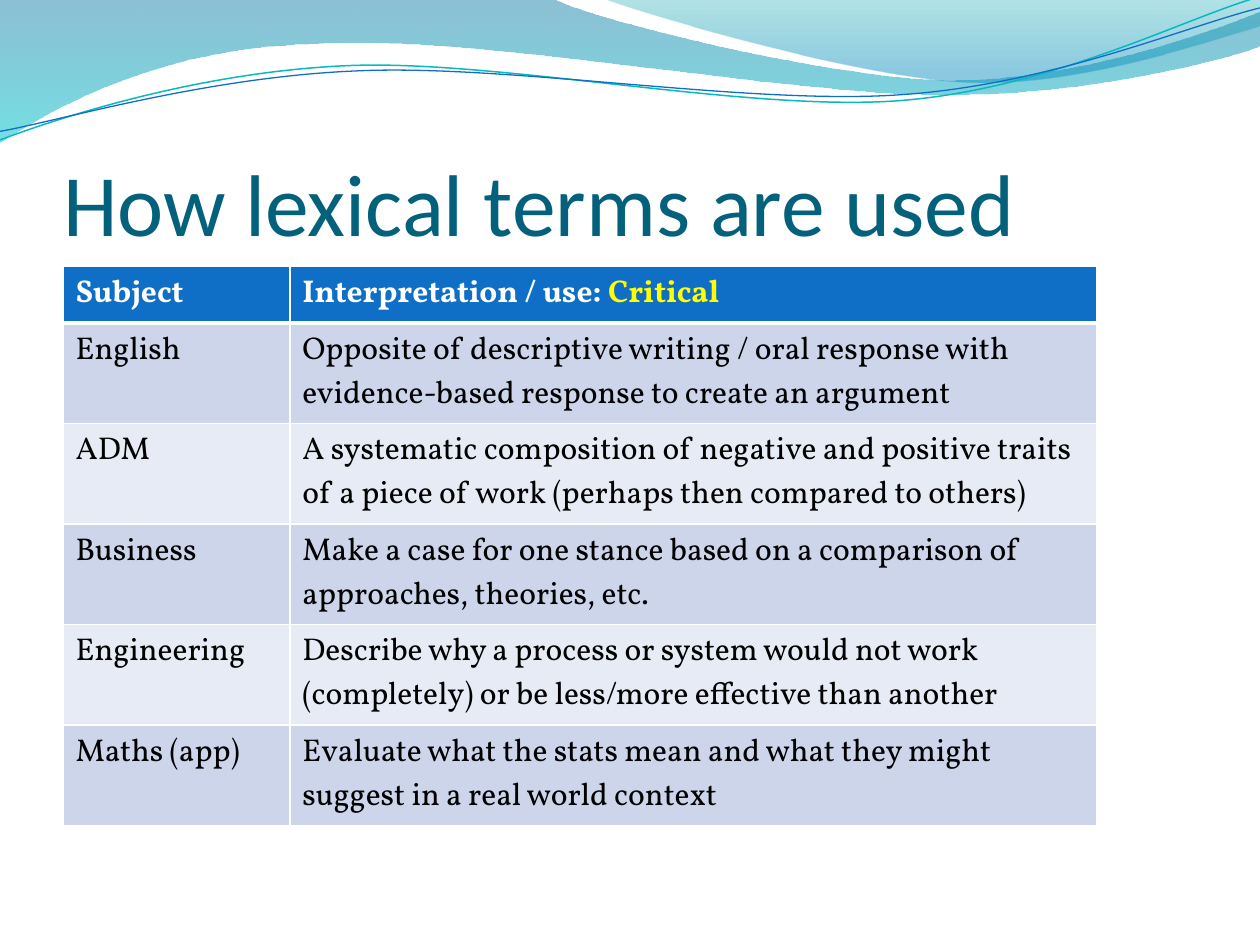
from lxml import etree
from pptx import Presentation
from pptx.dml.color import RGBColor
from pptx.enum.text import MSO_ANCHOR, MSO_AUTO_SIZE, PP_ALIGN
from pptx.oxml.ns import qn
from pptx.util import Pt

COLORS = {
    "title": "04617B", "header": "0F6FC6", "critical": "FFFF00",
    "white": "FFFFFF", "black": "000000", "odd": "CCD5EA", "even": "E7EBF5",
    "teal_line": "0AB8BF", "blue_line": "0F6FC6",
    "deep": "0074A1", "aqua": "00C6CF", "sea": "00A1A9", "sky": "008BBF",
}
TITLE = "How lexical terms are used"
HEADER = ("Subject", "Interpretation / use: ")
TERM = "Critical"
USES = [
    ("English", "Opposite of descriptive writing / oral response with "
                "evidence-based response to create an argument"),
    ("ADM", "A systematic composition of negative and positive traits of a "
            "piece of work (perhaps then compared to others)"),
    ("Business", "Make a case for one stance based on a comparison of "
                 "approaches, theories, etc."),
    ("Engineering", "Describe why a process or system would not work "
                    "(completely) or be less/more effective than another"),
    ("Maths (app)", "Evaluate what the stats mean and what they might "
                    "suggest in a real world context"),
]

# Outlines in points: a pair is a straight step, six numbers are a cubic curve.
BAND = [(0, 0), (317, -0.5), (343, 12, 478, 45.5, 546, 45.5),
        (614, 45.5, 690, 18.5, 720, 6.5), (720.5, 26),
        (708, 31.5, 626.5, 54.5, 537, 54), (447.5, 54, 275, 20, 185, 24.5),
        (93, 26, 33, 60, -0.5, 81.5)]
CREST = [(345, -0.5), (366.5, 8, 491, 44.5, 553.5, 47),
         (616.5, 49.5, 692, 23, 720, 15), (720, 0)]
# The two curves are drawn level and then turned by CURVE_TILT degrees.
CURVE_TILT = 357.3
TEAL_CURVE = [(-1.4, 63), (33.7, 51.7, 114.3, 29.4, 199.9, 30),
              (284.9, 30.5, 425.8, 67.2, 512.5, 64.8),
              (599.2, 62.3, 676.6, 25.9, 720.1, 15.5)]
BLUE_CURVE = [(-1.1, 58.1), (33.2, 53.7, 118.2, 32.6, 204.3, 33.2),
              (290.4, 33.2, 429.1, 63.8, 515.3, 61.4),
              (601.4, 59.4, 678.5, 30, 721.4, 21.5)]
# Gradient stops: position, colour, opacity in percent.
BAND_STOPS = [(0, "deep", 45), (1, "aqua", 55)]
CREST_STOPS = [(0, "sea", 30), (0.8, "sky", 45)]


def rgb(name):
    return RGBColor.from_string(COLORS[name])


def add_outline(shapes, x, y, outline, close):
    """Build a freeform, then join the points of each curve into a Bézier."""
    start, *rest = [(Pt(x + step[i]), Pt(y + step[i + 1]))
                    for step in outline for i in range(0, len(step), 2)]
    builder = shapes.build_freeform(*start)
    builder.add_line_segments(rest, close=close)
    sp = builder.convert_to_shape()
    sp.shadow.inherit = False
    lines = iter(list(sp.element.iter(qn("a:lnTo"))))
    for step in outline[1:]:
        first = next(lines)
        if len(step) == 6:
            first.tag = qn("a:cubicBezTo")
            for line in (next(lines), next(lines)):
                first.append(line[0])
                line.getparent().remove(line)
    return sp


def add_wave(s, x, y, outline, stops):
    sp = add_outline(s.shapes, x, y, outline, close=True)
    sp.line.fill.background()
    sp.fill.gradient()
    sp.fill.gradient_angle = 270
    for stop, (position, color, _) in zip(sp.fill.gradient_stops, stops):
        stop.position = position
        stop.color.rgb = rgb(color)
    for clr, (_, _, opacity) in zip(sp.element.spPr.iter(qn("a:srgbClr")), stops):
        etree.SubElement(clr, qn("a:alpha"), val=str(opacity * 1000))
    return sp


def add_curves(s, x, y):
    group = s.shapes.add_group_shape()
    for outline, color, width in ((TEAL_CURVE, "teal_line", 0.85),
                                  (BLUE_CURVE, "blue_line", 0.75)):
        sp = add_outline(group.shapes, x, y, outline, close=False)
        sp.rotation = CURVE_TILT
        sp.fill.background()
        sp.line.color.rgb = rgb(color)
        sp.line.width = Pt(width)
    return group


def add_waves(s, x, y):
    """Draw the header waves behind the title."""
    waves = [
        add_wave(s, x, y, BAND, BAND_STOPS),
        add_wave(s, x, y, CREST, CREST_STOPS),
        add_curves(s, x, y),
    ]
    for sp in waves:
        s.shapes.title.element.addprevious(sp.element)


def place_title(s, x, y, w, h):
    sp = s.shapes.title
    sp.left, sp.top, sp.width, sp.height = Pt(x), Pt(y), Pt(w), Pt(h)
    tf = sp.text_frame
    tf.text = TITLE
    tf.word_wrap = True
    tf.auto_size = MSO_AUTO_SIZE.NONE
    tf.vertical_anchor = MSO_ANCHOR.BOTTOM
    tf.margin_left = tf.margin_right = tf.margin_bottom = 0
    tf.margin_top = Pt(3.6)
    p = tf.paragraphs[0]
    p.alignment = PP_ALIGN.LEFT
    font = p.runs[0].font
    font.name, font.size = "Calibri", Pt(50)
    font.color.rgb = rgb("title")


def set_borders(cell, **widths):
    tc_pr = cell._tc.get_or_add_tcPr()
    for side in "LRTB":
        ln = etree.SubElement(tc_pr, qn(f"a:ln{side}"), w=str(Pt(widths.get(side, 1))))
        fill = etree.SubElement(ln, qn("a:solidFill"))
        etree.SubElement(fill, qn("a:srgbClr"), val=COLORS["white"])


def fill_cell(cell, text, row):
    is_header = row == 0
    set_borders(cell, **({"B": 3} if is_header else {"T": 3} if row == 1 else {}))
    cell.fill.solid()
    cell.fill.fore_color.rgb = rgb("header" if is_header else "odd" if row % 2 else "even")
    p = cell.text_frame.paragraphs[0]
    p.text = text
    if text == HEADER[1]:
        p.add_run().text = TERM
    for r in p.runs:
        r.font.name, r.font.size, r.font.bold = "Vollkorn", Pt(18), is_header
        color = "critical" if r.text == TERM else "white" if is_header else "black"
        r.font.color.rgb = rgb(color)


def add_uses_table(s, x, y, w, h):
    rows = [HEADER, *USES]
    frame = s.shapes.add_table(len(rows), 2, Pt(x), Pt(y), Pt(w), Pt(h))
    table = frame.table
    subject_w = 129.6
    table.columns[0].width = Pt(subject_w)
    table.columns[1].width = Pt(w - subject_w)
    for i, texts in enumerate(rows):
        table.rows[i].height = Pt(29.2)
        for j, text in enumerate(texts):
            fill_cell(table.cell(i, j), text, i)
    frame.height = Pt(h)


def main():
    prs = Presentation()
    prs.slide_width, prs.slide_height = Pt(720), Pt(540)
    s = prs.slides.add_slide(prs.slide_layouts[5])
    place_title(s, 36, 55.4, 648, 90)
    add_waves(s, 0, 0)
    add_uses_table(s, 36, 152.3, 590.8, 281.5)
    prs.save("out.pptx")


if __name__ == "__main__":
    main()
